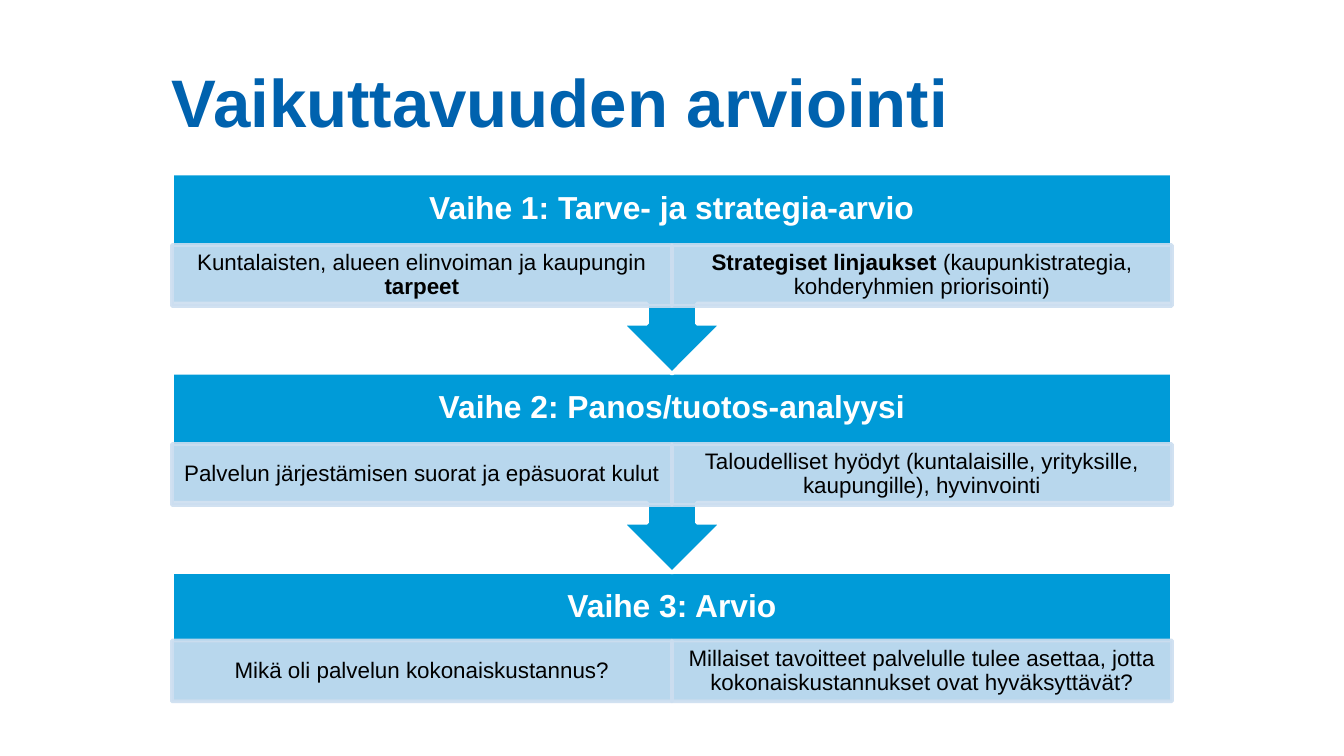
from lxml import etree
from pptx import Presentation, util as u
from pptx.dml import color
from pptx.enum import shapes, text
from pptx.oxml import ns

Cm, Pt = u.Cm, u.Pt
HUES = {"title": "0062AE", "step": "009BD8", "cell": "CCDEF0",
        "white": "FFFFFF", "black": "000000"}
KIND = shapes.MSO_SHAPE
MID = text.MSO_ANCHOR.MIDDLE
CENTER, LEFT = text.PP_ALIGN.CENTER, text.PP_ALIGN.LEFT
STYLES = {
    "title": {"pad": (0, 0), "align": LEFT, "gap": 0.85,
              "size": 36, "bold": True, "hue": "title"},
    "step": {"pad": (0.33, 0.33), "align": CENTER, "gap": 0.9,
             "size": 17, "bold": True, "hue": "white"},
    "cell": {"pad": (0.23, 0.05), "align": CENTER, "gap": 0.9,
             "size": 12, "bold": False, "hue": "black"},
}
STEPS = [
    ("Vaihe 1: Tarve- ja strategia-arvio",
     [[("Kuntalaisten, alueen elinvoiman ja kaupungin ", False), ("tarpeet", True)],
      [("Strategiset linjaukset", True),
       (" (kaupunkistrategia, kohderyhmien priorisointi)", False)]]),
    ("Vaihe 2: Panos/tuotos-analyysi",
     [[("Palvelun järjestämisen suorat ja epäsuorat kulut", False)],
      [("Taloudelliset hyödyt (kuntalaisille, yrityksille, kaupungille), hyvinvointi",
        False)]]),
    ("Vaihe 3: Arvio",
     [[("Mikä oli palvelun kokonaiskustannus?", False)],
      [("Millaiset tavoitteet palvelulle tulee asettaa, jotta "
        "kokonaiskustannukset ovat hyväksyttävät?", False)]]),
]


def put(obj, vals):
    """Set each named value on an object."""
    for name, val in vals.items():
        setattr(obj, name, val)


def rgb(hue):
    """Return the colour with the given name."""
    return color.RGBColor.from_string(HUES[hue])


def write(shape, runs, style):
    """Write (words, bold) runs into a shape in a named style."""
    look = STYLES[style]
    side, edge = (Cm(pad) for pad in look["pad"])
    frame = shape.text_frame
    put(frame, {"word_wrap": True, "vertical_anchor": MID,
                "margin_left": side, "margin_right": side,
                "margin_top": edge, "margin_bottom": edge})
    para = frame.paragraphs[0]
    put(para, {"alignment": look["align"], "line_spacing": look["gap"]})
    for words, bold in runs:
        run = para.add_run()
        run.text = words
        put(run.font, {"name": "Arial", "size": Pt(look["size"]), "bold": bold})
        run.font.color.rgb = rgb(look["hue"])


def label(slide, box, words, style):
    """Add a one-line text box."""
    shape = slide.shapes.add_textbox(*map(Cm, box))
    write(shape, [(words, STYLES[style]["bold"])], style)


def block(slide, kind, box, fill, line, alpha=None):
    """Add a filled and outlined shape, see-through if alpha is given."""
    shape = slide.shapes.add_shape(kind, *map(Cm, box))
    shape.shadow.inherit = False
    shape.fill.solid()
    shape.fill.fore_color.rgb = rgb(fill)
    shape.line.color.rgb = rgb(line)
    shape.line.width = Pt(2)
    if alpha:
        for tint in shape._element.spPr.iter(ns.qn("a:srgbClr")):
            etree.SubElement(tint, ns.qn("a:alpha")).set("val", str(alpha * 1000))
    return shape


def stage(slide, box, head, cells, last):
    """Draw one stage: a heading band over a row of cells, with an arrow unless last."""
    left, top, width, high = box
    kind = KIND.RECTANGLE if last else KIND.DOWN_ARROW_CALLOUT
    body = high * 0.65
    block(slide, kind, (left, top, width, body if last else high), "step", "white")
    label(slide, (left, top, width, 1.33), head, "step")
    part = width / len(cells)
    row = top + (1.3 if last else 1.35)
    for col, runs in enumerate(cells):
        spot = (left + col * part, row, part, 1.15)
        write(block(slide, KIND.RECTANGLE, spot, "cell", "cell", 90), runs, "cell")


def flow(slide, box):
    """Stack the stages from the bottom up so that each arrow lies on top."""
    left, top, width, pitch = box
    end = len(STEPS) - 1
    for num, (head, cells) in reversed(list(enumerate(STEPS))):
        spot = (left, top + num * pitch, width, pitch + 0.02)
        stage(slide, spot, head, cells, num == end)


def main():
    """Build and save the slide."""
    deck = Presentation()
    put(deck, {"slide_width": Cm(25.4), "slide_height": Cm(14.28)})
    slide = deck.slides.add_slide(deck.slide_layouts[6])
    flow(slide, (3.25, 3.28, 18.9, 3.76))
    label(slide, (3.25, 1.27, 21.74, 1.5), "Vaikuttavuuden arviointi", "title")
    deck.save("out.pptx")


if __name__ == "__main__":
    main()
